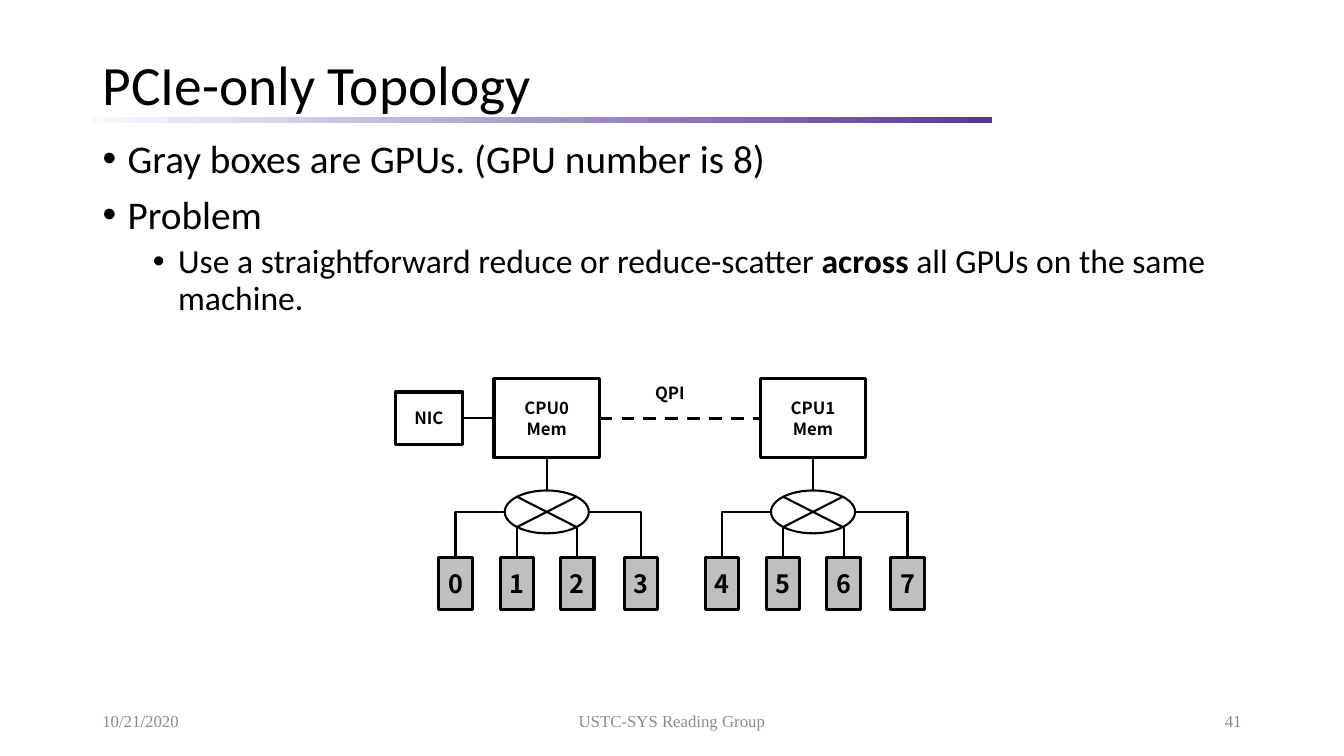
from dataclasses import dataclass
from lxml.etree import SubElement
from pptx import Presentation
from pptx.dml.color import RGBColor as RGB
from pptx.enum.dml import MSO_LINE
from pptx.enum.shapes import MSO_CONNECTOR as LINK, MSO_SHAPE as KIND
from pptx.enum.text import MSO_ANCHOR as ANCHOR, MSO_AUTO_SIZE as FIT, PP_ALIGN as ALIGN
from pptx.oxml.ns import qn
from pptx.util import Cm, Pt

# Content: *stars* mark bold words
TITLE = "PCIe-only Topology"
POINTS = [
    (0, "Gray boxes are GPUs. (GPU number is 8)"),
    (0, "Problem"),
    (1, "Use a straightforward reduce or reduce-scatter *across* all GPUs on the same machine."),
]
FOOTER = [  # text, left, width, alignment
    ("10/21/2020", 2.33, 7.62, ALIGN.LEFT),
    ("USTC-SYS Reading Group", 11.22, 11.43, ALIGN.CENTER),
    ("41", 23.92, 7.62, ALIGN.RIGHT),
]
NODES = [("CPU0", "0123"), ("CPU1", "4567")]
MEM, NIC, BUS = "Mem", "NIC", "QPI"


@dataclass(frozen=True)
class Theme:
    black: str = "000000"
    white: str = "FFFFFF"
    box: str = "BFBFBF"
    dim: str = "8C8C8C"
    pale: str = "F7FAFD"
    deep: str = "543795"
    main: str = "Calibri"
    label: str = "Noto Sans CJK SC"
    foot: str = "Times New Roman"
    head: float = 39.6
    levels: tuple = (28, 24)
    gpu: float = 18
    small: float = 12
    thick: float = 2.25
    thin: float = 1.5


T = Theme()

# Diagram measures in cm
MID, AXIS, STEP = 13.78, 10.54, 6.71  # first node centre, CPU row, node step
CPU_W, CPU_H = 2.66, 2.0
NIC_X, NIC_W, NIC_H = 9.96, 1.7, 1.32
HUB_Y, HUB_W, HUB_H = 12.9, 2.12, 1.08
GPU_Y, GPU_W, GPU_H = 14.04, 0.84, 1.32
SPREAD = (-2.3, -0.75, 0.77, 2.38)  # GPU centres around the node centre

deck = Presentation()
deck.slide_width, deck.slide_height = Cm(33.87), Cm(19.05)
slide = deck.slides.add_slide(deck.slide_layouts[1])
shapes = slide.shapes


def write(frame, lines, font=T.label, size=T.small, color=T.black, bold=False,
          align=ALIGN.CENTER, anchor=ANCHOR.MIDDLE, wrap=True):
    frame.word_wrap, frame.auto_size = wrap, FIT.NONE
    frame.vertical_anchor = anchor
    for i, line in enumerate(lines):
        para = frame.add_paragraph() if i else frame.paragraphs[0]
        para.alignment = align
        for j, part in enumerate(line.split("*")):
            run = para.add_run()
            run.text = part
            run.font.name, run.font.size = font, Pt(size)
            run.font.bold = bold or j % 2 == 1
            run.font.color.rgb = RGB.from_string(color)


def place(item, x, y, w, h):
    item.left, item.top, item.width, item.height = Cm(x), Cm(y), Cm(w), Cm(h)


def draw(kind, mid, axis, w, h, fill=T.white, line=T.thick):
    """Add a filled outline shape around its centre."""
    item = shapes.add_shape(kind, Cm(mid - w / 2), Cm(axis - h / 2), Cm(w), Cm(h))
    item.shadow.inherit = False
    item.fill.solid()
    item.fill.fore_color.rgb = RGB.from_string(fill)
    item.line.color.rgb = RGB.from_string(T.black)
    item.line.width = Pt(line)
    return item


def box(lines, mid, axis, w, h, fill=T.white, size=T.small):
    item = draw(KIND.RECTANGLE, mid, axis, w, h, fill)
    frame = item.text_frame
    frame.margin_left = frame.margin_right = 0
    write(frame, lines, size=size, bold=True)
    return item


def link(x1, y1, x2, y2, start=None, end=None, bent=False, width=T.thin):
    """Add a line; start and end are (shape, side) pairs."""
    line = shapes.add_connector(LINK.ELBOW if bent else LINK.STRAIGHT,
                                Cm(x1), Cm(y1), Cm(x2), Cm(y2))
    props = line._element.spPr
    if bent:
        props.find(qn("a:prstGeom")).set("prst", "bentConnector2")
    line.line.color.rgb = RGB.from_string(T.black)
    line.line.width = Pt(width)
    SubElement(props, qn("a:effectLst"))
    if start:
        line.begin_connect(*start)
    if end:
        line.end_connect(*end)
    return line


# Title and its gradient rule
rule = shapes.add_shape(KIND.RECTANGLE, Cm(2.33), Cm(2.95), Cm(22.66), Cm(0.14))
rule.shadow.inherit = False
rule.line.fill.background()
rule.fill.gradient()
rule.fill.gradient_angle = 0
for stop, color, spot in zip(rule.fill.gradient_stops, (T.pale, T.deep), (0, 1)):
    stop.color.rgb, stop.position = RGB.from_string(color), spot
place(shapes.title, 2.33, 1.4, 29.21, 1.6)
write(shapes.title.text_frame, [TITLE], font=T.main, size=T.head, align=ALIGN.LEFT)
shapes.title.text_frame.paragraphs[0].line_spacing = 0.9

# Bulleted list
body = slide.placeholders[1]
place(body, 2.33, 3.38, 29.21, 13.79)
write(body.text_frame, [line for _, line in POINTS], font=T.main,
      align=ALIGN.LEFT, anchor=ANCHOR.TOP)
for i, (para, (level, _)) in enumerate(zip(body.text_frame.paragraphs, POINTS)):
    para.level, para.line_spacing = level, 0.9
    para.space_before = Pt((10, 5)[level] if i else 0)
    para.space_after = Pt(0)
    props = para._p.get_or_add_pPr()
    props.set("marL", str(Cm(0.635 + 1.27 * level)))
    props.set("indent", str(-Cm(0.635)))
    SubElement(props, qn("a:buFont")).set("typeface", "Arial")
    SubElement(props, qn("a:buChar")).set("char", "•")
    for run in para.runs:
        run.font.size = Pt(T.levels[level])

# Footer
for text, x, w, align in FOOTER:
    note = shapes.add_textbox(Cm(x), Cm(17.66), Cm(w), Cm(1.01))
    write(note.text_frame, [text], font=T.foot, color=T.dim, align=align)

# Nodes: CPU, switch and four GPUs each
cpus = []
for n, (name, gpus) in enumerate(NODES):
    mid = MID + n * STEP
    cpu = box([name, MEM], mid, AXIS, CPU_W, CPU_H)
    cpus.append(cpu)
    draw(KIND.FLOWCHART_SUMMING_JUNCTION, mid, HUB_Y, HUB_W, HUB_H, line=T.thin)
    link(mid, AXIS + CPU_H / 2, mid, HUB_Y - HUB_H / 2, start=(cpu, 2))
    for gpu, shift in zip(gpus, SPREAD):
        x = mid + shift
        unit = box([gpu], x, GPU_Y + GPU_H / 2, GPU_W, GPU_H, fill=T.box, size=T.gpu)
        if abs(shift) > HUB_W / 2:
            edge = mid + (HUB_W / 2 if shift > 0 else -HUB_W / 2)
            link(edge, HUB_Y, x, GPU_Y, bent=True)
        else:
            link(x, HUB_Y + 0.38, x, GPU_Y, end=(unit, 0))

# Network card and the bus between CPUs
card = box([NIC], NIC_X + NIC_W / 2, AXIS, NIC_W, NIC_H)
link(NIC_X + NIC_W, AXIS, MID - CPU_W / 2, AXIS, start=(card, 3), end=(cpus[0], 1))
bus = link(MID + CPU_W / 2, AXIS, MID + STEP - CPU_W / 2, AXIS,
           start=(cpus[0], 3), end=(cpus[1], 1), width=T.thick)
bus.line.dash_style = MSO_LINE.DASH
tag = shapes.add_textbox(Cm(16.26), Cm(9.53), Cm(1.63), Cm(0.97))
write(tag.text_frame, [BUS], bold=True, align=ALIGN.LEFT, anchor=ANCHOR.TOP, wrap=False)

deck.save("out.pptx")
